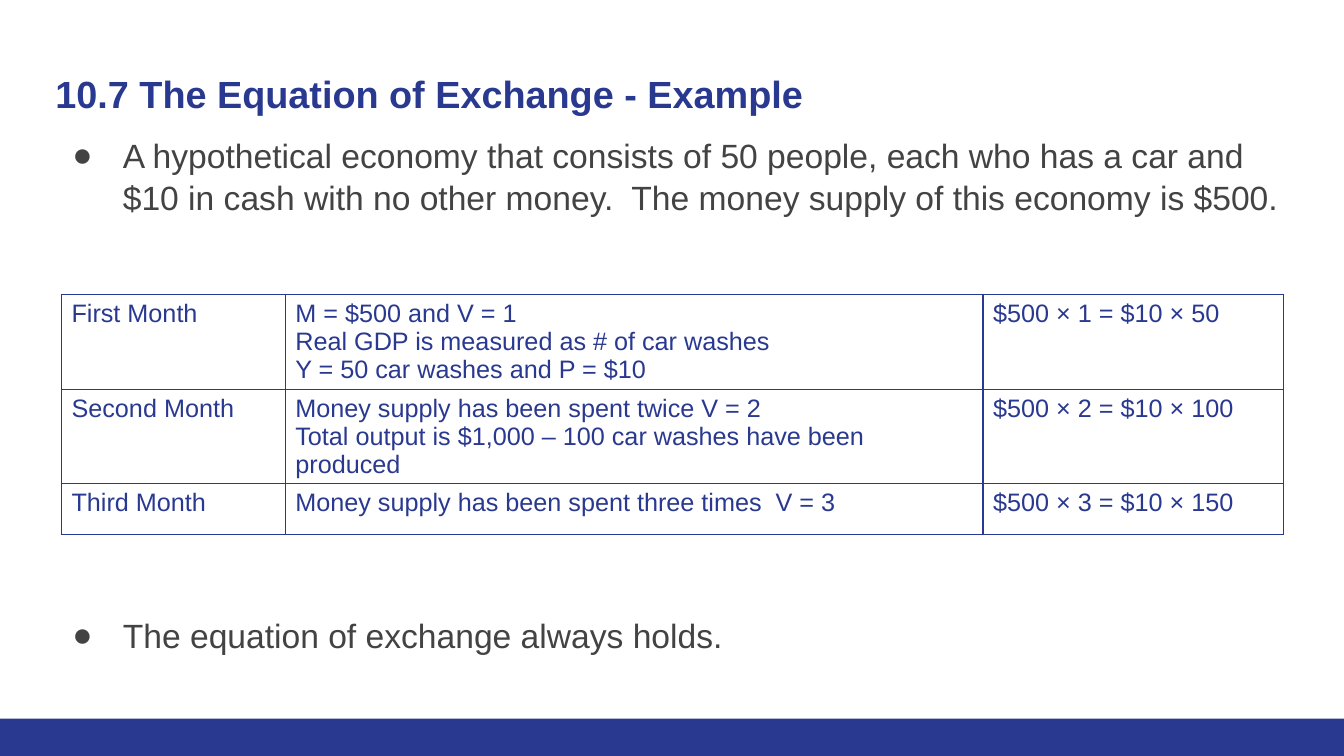
from dataclasses import dataclass

from lxml.etree import SubElement
from pptx import Presentation
from pptx.dml.color import RGBColor
from pptx.enum.shapes import MSO_SHAPE
from pptx.enum.text import MSO_ANCHOR, MSO_AUTO_SIZE, PP_ALIGN
from pptx.oxml.ns import qn
from pptx.slide import Slide
from pptx.table import _Cell
from pptx.text.text import TextFrame
from pptx.util import Inches, Pt

NAVY = RGBColor(0x2A, 0x39, 0x90)
GRAY = RGBColor(0x43, 0x43, 0x43)
FONT = "Arial"
LEFT, WIDTH = 0.45, 12.42
COLUMN_WIDTHS = (2.22, 6.92, 2.98)


@dataclass(frozen=True)
class Bullet:
    text: str
    top: float
    height: float
    line_spacing: float


@dataclass(frozen=True)
class Month:
    name: str
    events: str
    equation: str
    height: float


BULLETS = (
    Bullet("A hypothetical economy that consists of 50 people, each who has a car and "
           "$10 in cash with no other money.  The money supply of this economy is $500.",
           1.22, 1.08, 1.05),
    Bullet("The equation of exchange always holds.", 5.94, 0.69, 1.15),
)
MONTHS = (
    Month("First Month",
          "M = $500 and V = 1\n"
          "Real GDP is measured as # of car washes\n"
          "Y = 50 car washes and P = $10",
          "$500 × 1 = $10 × 50", 0.94),
    Month("Second Month",
          "Money supply has been spent twice V = 2\n"
          "Total output is $1,000 – 100 car washes have been produced",
          "$500 × 2 = $10 × 100", 0.94),
    Month("Third Month", "Money supply has been spent three times  V = 3",
          "$500 × 3 = $10 × 150", 0.5),
)


def format_runs(tf: TextFrame, size: float, color: RGBColor, bold: bool = False) -> None:
    for p in tf.paragraphs:
        for r in p.runs:
            r.font.name = FONT
            r.font.size = Pt(size)
            r.font.bold = bold
            r.font.color.rgb = color


def set_frame(tf: TextFrame) -> None:
    """Wrap the text from the top, with equal margins on all sides."""
    tf.word_wrap = True
    tf.auto_size = MSO_AUTO_SIZE.NONE
    tf.vertical_anchor = MSO_ANCHOR.TOP
    tf.margin_left = tf.margin_right = tf.margin_top = tf.margin_bottom = Inches(0.1)


def add_footer_bar(slide: Slide) -> None:
    sp = slide.shapes.add_shape(MSO_SHAPE.RECTANGLE, 0, Inches(7.13),
                                Inches(13.33), Inches(0.37))
    sp.shadow.inherit = False
    sp.fill.solid()
    sp.fill.fore_color.rgb = NAVY
    sp.line.fill.background()


def set_title(slide: Slide, text: str) -> None:
    title = slide.shapes.title
    title.left, title.top = Inches(LEFT), Inches(0.6)
    title.width, title.height = Inches(WIDTH), Inches(0.89)
    tf = title.text_frame
    set_frame(tf)
    tf.text = text
    tf.paragraphs[0].alignment = PP_ALIGN.LEFT
    format_runs(tf, 27, NAVY, bold=True)


def add_bullet(slide: Slide, bullet: Bullet) -> None:
    sp = slide.shapes.add_textbox(Inches(LEFT), Inches(bullet.top),
                                  Inches(WIDTH), Inches(bullet.height))
    tf = sp.text_frame
    set_frame(tf)
    tf.text = bullet.text
    p = tf.paragraphs[0]
    p.line_spacing = bullet.line_spacing
    pPr = p._p.get_or_add_pPr()
    pPr.set("marL", str(Inches(0.67)))
    pPr.set("indent", str(Inches(-0.5)))
    color = SubElement(pPr, qn("a:buClr"))
    SubElement(color, qn("a:srgbClr"), val=str(GRAY))
    SubElement(pPr, qn("a:buFont"), typeface=FONT)
    SubElement(pPr, qn("a:buChar"), char="●")
    format_runs(tf, 24, GRAY)


def set_borders(cell: _Cell) -> None:
    tcPr = cell._tc.get_or_add_tcPr()
    for side in ("lnL", "lnR", "lnT", "lnB"):
        line = SubElement(tcPr, qn(f"a:{side}"), w=str(Pt(1)))
        fill = SubElement(line, qn("a:solidFill"))
        SubElement(fill, qn("a:srgbClr"), val=str(NAVY))


def add_month_table(slide: Slide) -> None:
    height = sum(month.height for month in MONTHS)
    table = slide.shapes.add_table(len(MONTHS), len(COLUMN_WIDTHS), Inches(0.61), Inches(2.92),
                                   Inches(sum(COLUMN_WIDTHS)), Inches(height)).table
    table.first_row = table.horz_banding = False
    for column, width in zip(table.columns, COLUMN_WIDTHS):
        column.width = Inches(width)
    for row, month in zip(table.rows, MONTHS):
        row.height = Inches(month.height)
        for cell, text in zip(row.cells, (month.name, month.events, month.equation)):
            cell.text_frame.text = text
            format_runs(cell.text_frame, 18, NAVY)
            set_borders(cell)
            cell.fill.background()


def main() -> None:
    prs = Presentation()
    prs.slide_width, prs.slide_height = Inches(13.33), Inches(7.5)
    slide = prs.slides.add_slide(prs.slide_layouts[5])
    add_footer_bar(slide)
    set_title(slide, "10.7 The Equation of Exchange - Example")
    for bullet in BULLETS:
        add_bullet(slide, bullet)
    add_month_table(slide)
    prs.save("out.pptx")


if __name__ == "__main__":
    main()
